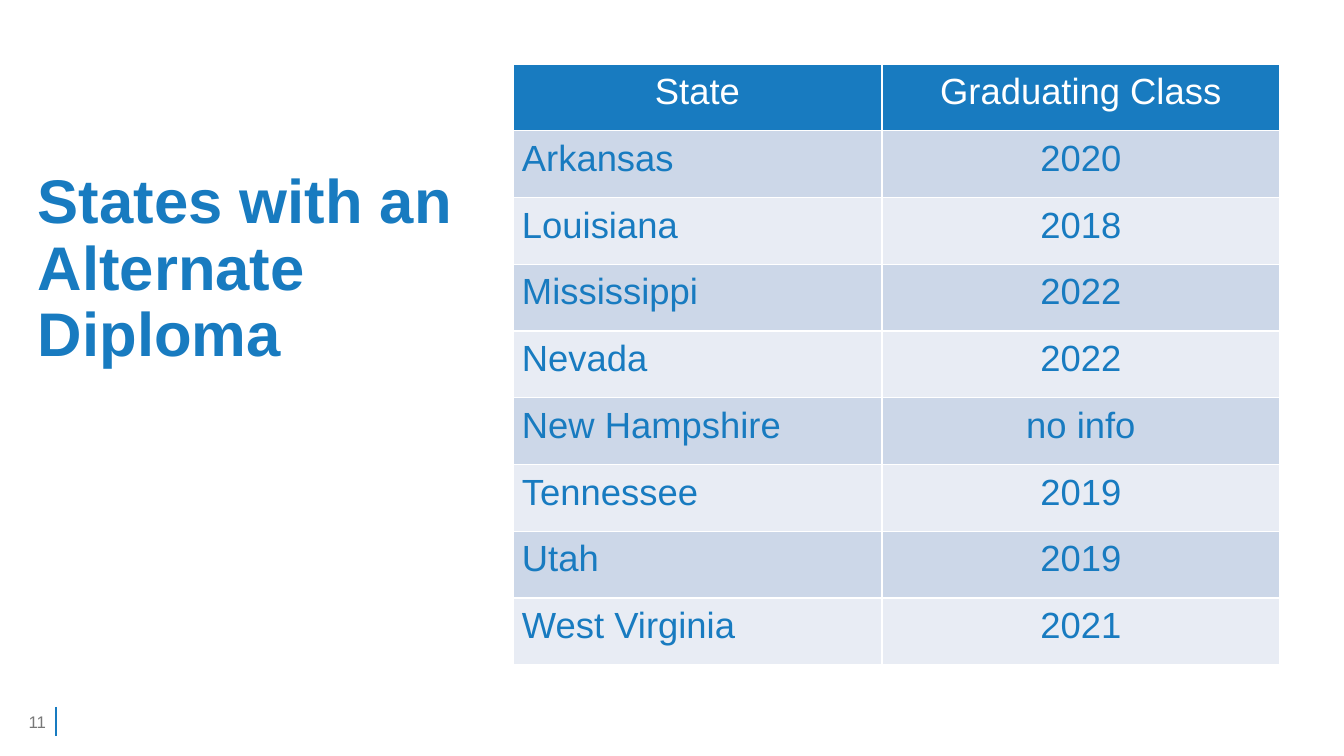
from lxml import etree
from pptx import Presentation
from pptx.dml.color import RGBColor
from pptx.enum.shapes import MSO_CONNECTOR
from pptx.enum.text import MSO_ANCHOR, PP_ALIGN
from pptx.oxml.ns import qn
from pptx.util import Emu, Pt

LEFT, CENTER, RIGHT = PP_ALIGN.LEFT, PP_ALIGN.CENTER, PP_ALIGN.RIGHT
MIDDLE = MSO_ANCHOR.MIDDLE
STRAIGHT = MSO_CONNECTOR.STRAIGHT

TITLE = "States with an Alternate Diploma"
PAGE_NUMBER = "11"
HEADER = ("State", "Graduating Class")
STATES = [
    ("Arkansas", "2020"),
    ("Louisiana", "2018"),
    ("Mississippi", "2022"),
    ("Nevada", "2022"),
    ("New Hampshire", "no info"),
    ("Tennessee", "2019"),
    ("Utah", "2019"),
    ("West Virginia", "2021"),
]

THEME = {
    "font": "Arial",
    "blue": "187BC0",
    "white": "FFFFFF",
    "gray": "787878",
    "bands": ("CCD7E8", "E8ECF4"),
    "title_size": 44,
    "table_size": 26,
    "number_size": 12,
    "rule_width": 1.5,
}

SLIDE_SIZE = (1344, 756)
TITLE_BOX = (28, 98, 460, 345)
NUMBER_BOX = (0, 702, 56, 40)
NUMBER_RULE = (56, 707, 56, 736)
TABLE_ORIGIN = (513, 64)
TABLE_HEIGHT = 601
COLUMN_WIDTHS = (369, 398)
CELL_MARGINS = {"margin_left": 9, "margin_right": 9, "margin_top": 5, "margin_bottom": 5}


def px(length):
    return Emu(round(length * 914400 / 100.8))


def color(name):
    return RGBColor.from_string(name)


def write(text_frame, text, size, text_color, bold=False, **paragraph_format):
    paragraph = text_frame.paragraphs[0]
    paragraph.text = text
    for name, value in paragraph_format.items():
        setattr(paragraph, name, value)
    font = paragraph.runs[0].font
    font_format = {"name": THEME["font"], "size": Pt(size), "bold": bold}
    for name, value in font_format.items():
        setattr(font, name, value)
    font.color.rgb = color(text_color)


def add_text(slide, box, text, size, text_color, **formats):
    shape = slide.shapes.add_textbox(*map(px, box))
    shape.text_frame.word_wrap = True
    shape.text_frame.vertical_anchor = MIDDLE
    write(shape.text_frame, text, size, text_color, **formats)


def add_rule(slide):
    rule = slide.shapes.add_connector(STRAIGHT, *map(px, NUMBER_RULE))
    rule.line.color.rgb = color(THEME["blue"])
    rule.line.width = Pt(THEME["rule_width"])
    etree.SubElement(rule.element.spPr, qn("a:effectLst"))


def add_states_table(slide):
    rows = [HEADER, *STATES]
    table = slide.shapes.add_table(
        len(rows), len(HEADER), *map(px, TABLE_ORIGIN),
        px(sum(COLUMN_WIDTHS)), px(TABLE_HEIGHT),
    ).table
    for column, width in zip(table.columns, COLUMN_WIDTHS):
        column.width = px(width)
    for row_index, values in enumerate(rows):
        table.rows[row_index].height = px(TABLE_HEIGHT / len(rows))
        is_header = row_index == 0
        fill = THEME["blue"] if is_header else THEME["bands"][(row_index - 1) % 2]
        text_color = THEME["white"] if is_header else THEME["blue"]
        for column_index, value in enumerate(values):
            cell = table.cell(row_index, column_index)
            for name, margin in CELL_MARGINS.items():
                setattr(cell, name, px(margin))
            cell.fill.solid()
            cell.fill.fore_color.rgb = color(fill)
            alignment = CENTER if is_header or column_index else LEFT
            write(cell.text_frame, value, THEME["table_size"], text_color,
                  alignment=alignment, line_spacing=1.07)


def main():
    presentation = Presentation()
    presentation.slide_width, presentation.slide_height = map(px, SLIDE_SIZE)
    slide = presentation.slides.add_slide(presentation.slide_layouts[6])
    add_rule(slide)
    add_text(slide, TITLE_BOX, TITLE, THEME["title_size"], THEME["blue"],
             bold=True, line_spacing=0.9)
    add_states_table(slide)
    add_text(slide, NUMBER_BOX, PAGE_NUMBER, THEME["number_size"], THEME["gray"],
             alignment=RIGHT)
    presentation.save("out.pptx")


if __name__ == "__main__":
    main()
